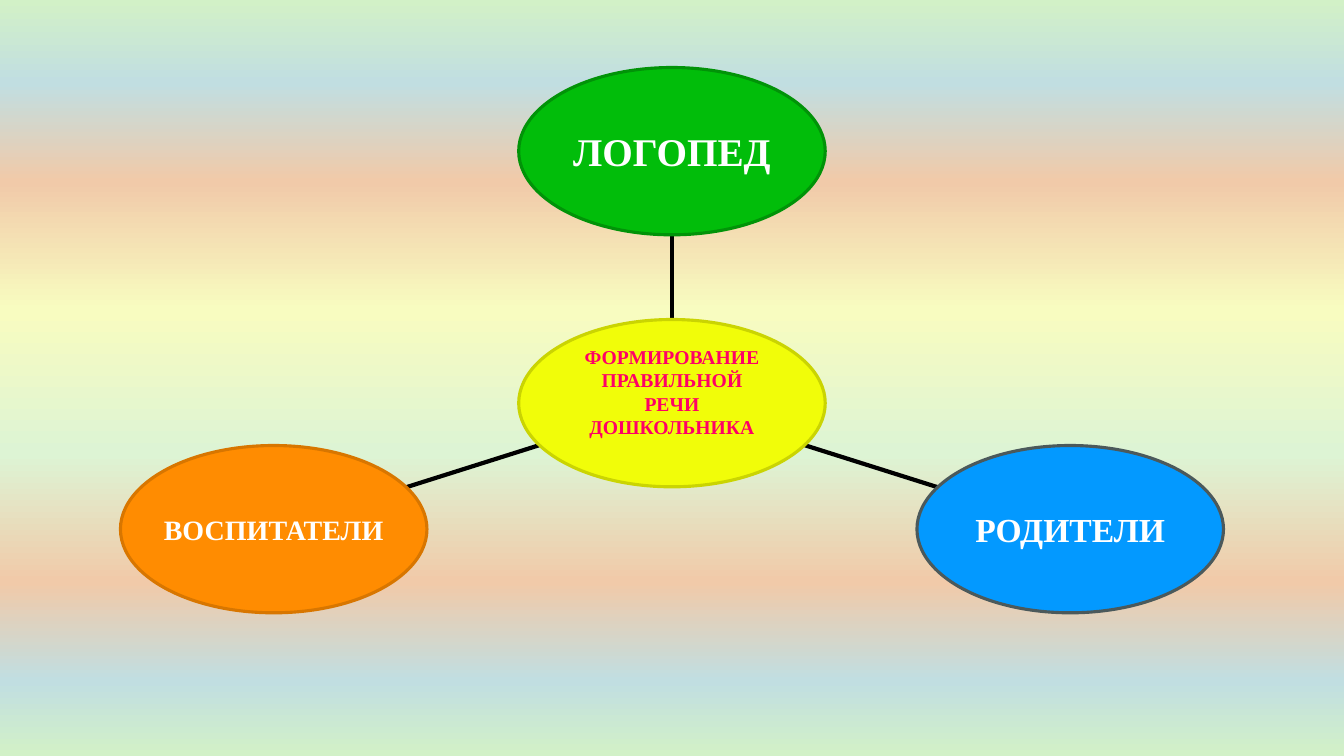
import math

import pptx
import pptx.dml.color
import pptx.enum.shapes
import pptx.enum.text
import pptx.oxml.ns
import pptx.oxml.xmlchemy
import pptx.util
from lxml import etree

WIDTH, HEIGHT = 13.33, 7.5
OVAL_W, OVAL_H = 3.04, 1.66
CENTER_X, CENTER_Y = WIDTH / 2, HEIGHT * 8 / 15
qn = pptx.oxml.ns.qn
Inches, Pt = pptx.util.Inches, pptx.util.Pt


def color(hex_string):
    return pptx.dml.color.RGBColor.from_string(hex_string)


def add_oval(x, y, lines, size, text_color, fill, outline):
    oval = slide.shapes.add_shape(
        pptx.enum.shapes.MSO_SHAPE.OVAL,
        Inches(x - OVAL_W / 2), Inches(y - OVAL_H / 2), Inches(OVAL_W), Inches(OVAL_H))
    oval.shadow.inherit = False
    oval.fill.solid()
    oval.fill.fore_color.rgb = color(fill)
    oval.line.color.rgb = color(outline)
    oval.line.width = Pt(2.25)
    frame = oval.text_frame
    frame_format = {"margin_left": 0, "margin_right": 0, "margin_top": 0, "margin_bottom": 0,
                    "word_wrap": False,
                    "vertical_anchor": pptx.enum.text.MSO_ANCHOR.MIDDLE}
    for name, value in frame_format.items():
        setattr(frame, name, value)
    frame.text = "\n".join(lines)
    for paragraph in frame.paragraphs:
        paragraph.alignment = pptx.enum.text.PP_ALIGN.CENTER
        font_format = {"name": "Times New Roman", "size": Pt(size), "bold": True}
        for name, value in font_format.items():
            setattr(paragraph.runs[0].font, name, value)
        paragraph.runs[0].font.color.rgb = color(text_color)
    return oval


presentation = pptx.Presentation()
presentation.slide_width, presentation.slide_height = Inches(WIDTH), Inches(HEIGHT)
slide = presentation.slides.add_slide(presentation.slide_layouts[6])

# Background: pastel bands from top to bottom
bands = [(0, "D2F1C7"), (11, "C1DEE1"), (24, "F1CAA9"), (41, "F8FCC0"),
         (60, "DDF4D4"), (77, "F1CAA9"), (90, "C1DEE1"), (100, "D2F1C7")]
background = slide.background.fill
background.gradient()
background.gradient_angle = 270
stops = next(slide.element.iter(qn("a:gsLst")))
for stop in list(stops):
    stops.remove(stop)
for percent, band in bands:
    stop = etree.SubElement(stops, qn("a:gs"), pos=str(percent * 1000))
    etree.SubElement(stop, qn("a:srgbClr"), val=band)

# Participants: offset from the centre, label, text size, fill, outline
participants = [
    (0, -HEIGHT / 3, "ЛОГОПЕД", 28, "01BD0A", "019308"),
    (3.95, HEIGHT / 6, "РОДИТЕЛИ", 24, "0399FF", "4B595B"),
    (-3.95, HEIGHT / 6, "ВОСПИТАТЕЛИ", 20, "FF8C01", "D87600"),
]
for dx, dy, label, size, fill, outline in participants:
    # Spoke runs between the rims of the two ovals
    rim = 1 / math.hypot(dx / (OVAL_W / 2), dy / (OVAL_H / 2))
    spoke = slide.shapes.add_connector(
        pptx.enum.shapes.MSO_CONNECTOR.STRAIGHT,
        Inches(CENTER_X + dx * rim), Inches(CENTER_Y + dy * rim),
        Inches(CENTER_X + dx * (1 - rim)), Inches(CENTER_Y + dy * (1 - rim)))
    spoke.line.color.rgb = color("000000")
    spoke.line.width = Pt(3)
    etree.SubElement(spoke._element.spPr, qn("a:effectLst"))
    add_oval(CENTER_X + dx, CENTER_Y + dy, [label], size, "FFFFFF", fill, outline)

# Shared goal in the centre, text raised by half a line
goal = add_oval(CENTER_X, CENTER_Y, ["ФОРМИРОВАНИЕ", "ПРАВИЛЬНОЙ", "РЕЧИ", "ДОШКОЛЬНИКА"],
                14, "FF0066", "F1FD09", "CAD402")
goal.text_frame.margin_bottom = Inches(0.23)

presentation.save("out.pptx")
